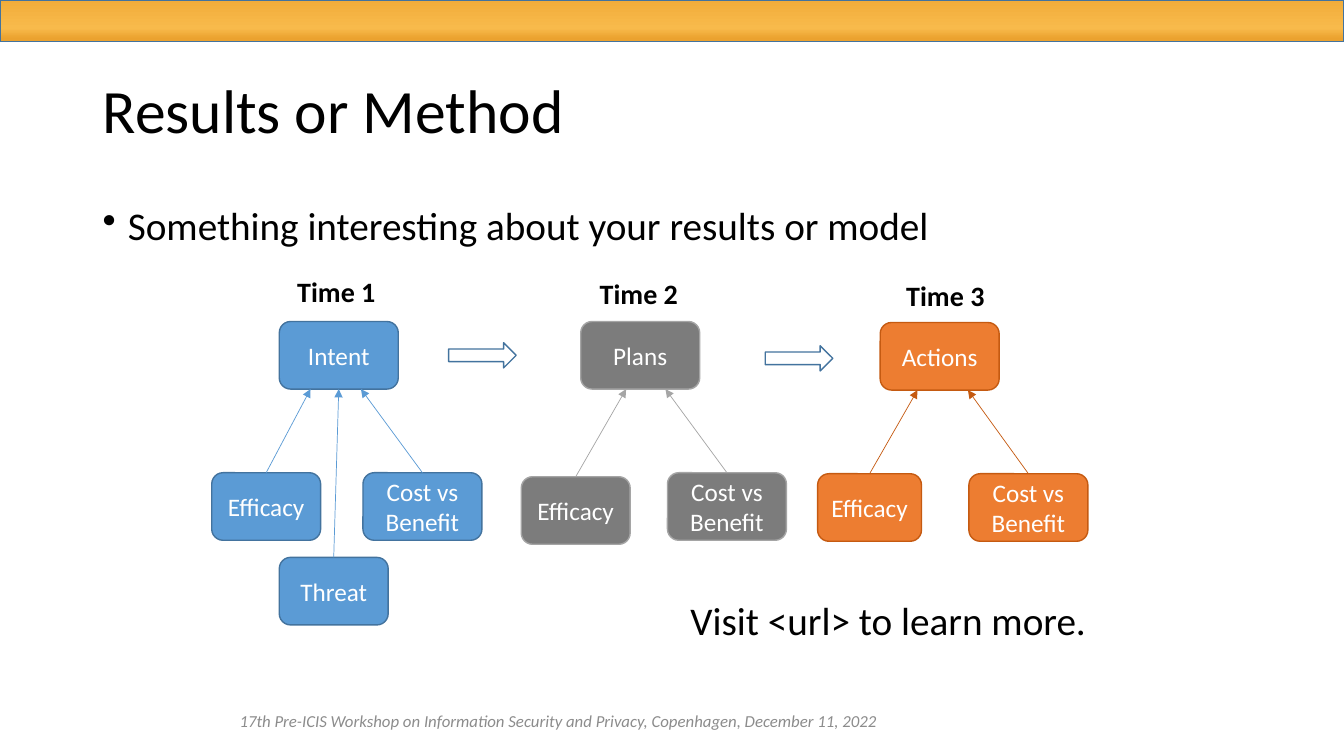
from copy import deepcopy
from dataclasses import dataclass

from pptx import Presentation
from pptx.dml.color import RGBColor
from pptx.enum.shapes import MSO_CONNECTOR as Connector, MSO_SHAPE as Preset
from pptx.enum.text import MSO_ANCHOR as Anchor, PP_ALIGN as Align
from pptx.oxml.ns import qn
from pptx.util import Inches, Pt


@dataclass(frozen=True)
class Theme:
    font: str = "Calibri"
    black: str = "000000"
    white: str = "FFFFFF"
    grey: str = "8C8C8C"
    outline: str = "43739E"
    banner: tuple = ((0, "F2AC3A"), (0.68, "F8BA4B"), (0.93, "EBA22F"))
    # Fill, border and arrow colour of each time step
    blue: tuple = ("5B9BD5", "43739E", "5B9BD5")
    dark: tuple = ("7C7C7C", "A5A5A5", "A5A5A5")
    orange: tuple = ("ED7D31", "C55A11", "C55A11")
    title: int = 44
    body: int = 28
    heading: int = 20
    node: int = 18
    footer: int = 12


THEME = Theme()
NODE_HEIGHT = 0.67
GOAL_WIDTH = 1.18

# Heading, its left and top; goal, its left and top; colours;
# causes as (text, left, top, width, arrow end x)
STEPS = (
    ("Time 1", 2.85, 2.67, "Intent", 2.77, 3.19, THEME.blue, (
        ("Threat", 2.77, 5.53, 1.08, None),
        ("Efficacy", 2.1, 4.69, 1.08, 3.08),
        ("Cost vs Benefit", 3.6, 4.69, 1.18, 3.58))),
    ("Time 2", 5.85, 2.69, "Plans", 5.76, 3.19, THEME.dark, (
        ("Efficacy", 5.17, 4.73, 1.08, 6.21),
        ("Cost vs Benefit", 6.62, 4.69, 1.18, 6.6))),
    ("Time 3", 8.89, 2.71, "Actions", 8.73, 3.2, THEME.orange, (
        ("Efficacy", 8.11, 4.7, 1.03, 9.1),
        ("Cost vs Benefit", 9.61, 4.7, 1.18, 9.6))),
)


def rgb(code):
    return RGBColor.from_string(code)


def write(shape, text, size, color, align=Align.LEFT, anchor=Anchor.TOP,
          bold=False, italic=False):
    frame = shape.text_frame
    frame.word_wrap = True
    frame.vertical_anchor = anchor
    para = frame.paragraphs[0]
    para.text = text
    para.alignment = align
    font = para.font
    font.name, font.size, font.color.rgb = THEME.font, Pt(size), rgb(color)
    font.bold, font.italic = bold, italic
    return para


def add_text(page, area, text, size, color=THEME.black, **style):
    box = page.shapes.add_textbox(*map(Inches, area))
    return write(box, text, size, color, **style)


def add_bullet(para, indent):
    props = para._p.get_or_add_pPr()
    props.set("marL", str(Inches(indent)))
    props.set("indent", str(-Inches(indent)))
    bullet = props.makeelement(qn("a:buChar"), {"char": "•"})
    props.insert_element_before(bullet, "a:tabLst", "a:defRPr", "a:extLst")


def add_preset(page, preset, area, border):
    shape = page.shapes.add_shape(preset, *map(Inches, area))
    shape.shadow.inherit = False
    shape.line.color.rgb = rgb(border)
    shape.line.width = Pt(1)
    return shape


def add_banner(page):
    banner = add_preset(page, Preset.RECTANGLE, (0, 0, 13.33, 0.41), THEME.outline)
    fill = banner.fill
    fill.gradient()
    fill.gradient_angle = 270
    stops = banner.element.spPr.find(qn("a:gradFill")).find(qn("a:gsLst"))
    stops.append(deepcopy(stops[-1]))
    for stop, (position, color) in zip(fill.gradient_stops, THEME.banner):
        stop.position = position
        stop.color.rgb = rgb(color)


def add_node(page, text, left, top, width, colors):
    fill, border, _ = colors
    node = add_preset(page, Preset.ROUNDED_RECTANGLE,
                      (left, top, width, NODE_HEIGHT), border)
    node.fill.solid()
    node.fill.fore_color.rgb = rgb(fill)
    write(node, text, THEME.node, THEME.white, Align.CENTER, Anchor.MIDDLE)
    return node


def add_link(page, cause, goal, end_x, color):
    """Draw an arrow from a cause up to its goal; no end_x means the middle."""
    bottom = goal.top + goal.height
    link = page.shapes.add_connector(
        Connector.STRAIGHT, cause.left, cause.top, Inches(end_x or 0), bottom)
    link.begin_connect(cause, 0)
    if end_x is None:
        link.end_connect(goal, 2)
    link.line.color.rgb = rgb(color)
    link.line.width = Pt(0.5)
    line = link.line._get_or_add_ln()
    line.append(line.makeelement(qn("a:tailEnd"), {"type": "triangle"}))
    props = link.element.spPr
    props.append(props.makeelement(qn("a:effectLst"), {}))


def add_step(page, heading, heading_left, heading_top, goal_text, left, top,
             colors, causes):
    add_text(page, (heading_left, heading_top, 1, 0.44), heading,
             THEME.heading, bold=True)
    goal = add_node(page, goal_text, left, top, GOAL_WIDTH, colors)
    for text, cause_left, cause_top, width, end_x in causes:
        cause = add_node(page, text, cause_left, cause_top, width, colors)
        add_link(page, cause, goal, end_x, colors[2])


def add_block_arrow(page, left, top):
    arrow = add_preset(page, Preset.RIGHT_ARROW, (left, top, 0.67, 0.25),
                       THEME.outline)
    arrow.fill.solid()
    arrow.fill.fore_color.rgb = rgb(THEME.white)


def main():
    deck = Presentation()
    deck.slide_width, deck.slide_height = Inches(13.33), Inches(7.5)
    page = deck.slides.add_slide(deck.slide_layouts[6])

    # Banner, title and lead bullet
    add_banner(page)
    title = add_text(page, (0.92, 0.4, 11.5, 1.45), "Results or Method",
                     THEME.title, anchor=Anchor.MIDDLE)
    title.line_spacing = 0.9
    lead = add_text(page, (0.92, 2, 11.5, 0.6),
                    "Something interesting about your results or model", THEME.body)
    lead.line_spacing = 0.9
    add_bullet(lead, 0.25)

    # Model: three time steps joined by block arrows
    for step in STEPS:
        add_step(page, *step)
    add_block_arrow(page, 4.45, 3.4)
    add_block_arrow(page, 7.59, 3.43)

    # Closing line and footer
    add_text(page, (6.75, 5.87, 5.67, 0.57), "Visit <url> to learn more.", THEME.body)
    add_text(page, (2.16, 6.95, 6.76, 0.4),
             "17th Pre-ICIS Workshop on Information Security and Privacy, "
             "Copenhagen, December 11, 2022",
             THEME.footer, THEME.grey, align=Align.CENTER,
             anchor=Anchor.MIDDLE, italic=True)

    deck.save("out.pptx")


if __name__ == "__main__":
    main()
